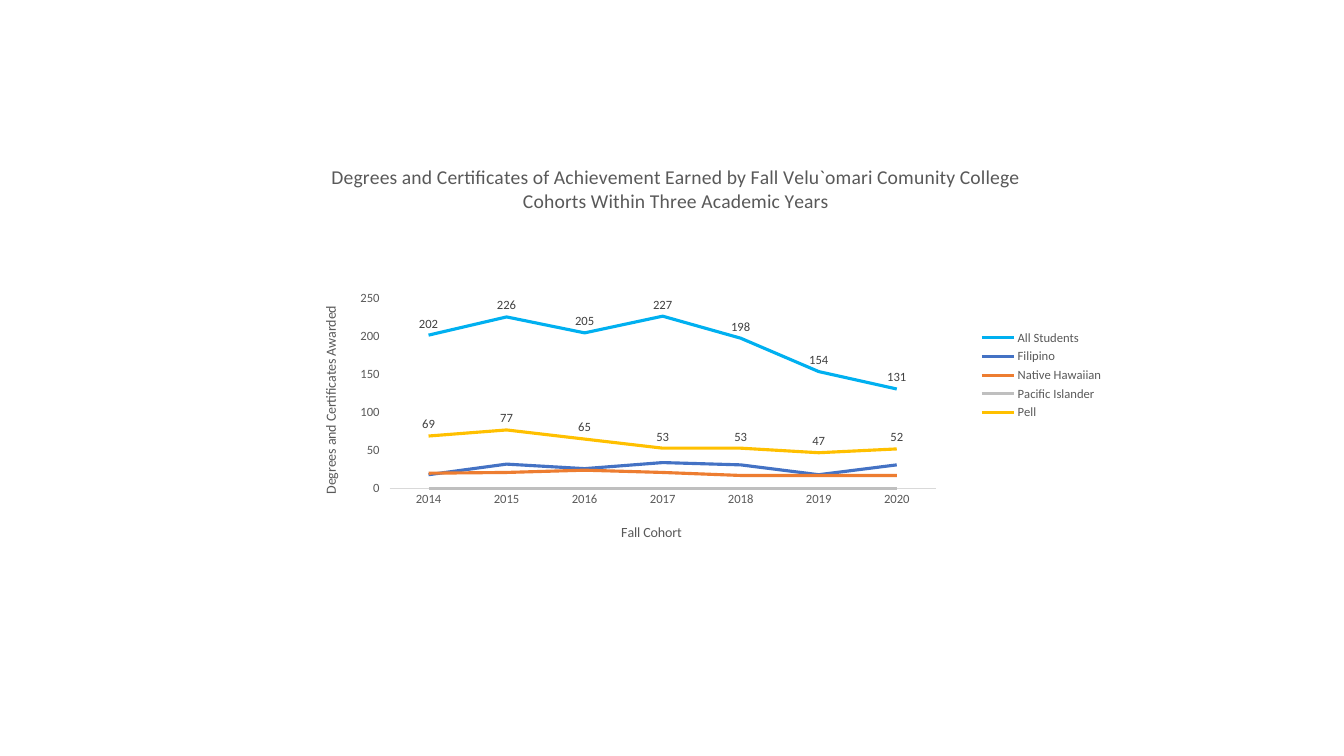
from pptx import Presentation
from pptx.chart.data import CategoryChartData
from pptx.dml.color import RGBColor
from pptx.enum.chart import XL_CHART_TYPE, XL_LABEL_POSITION, XL_LEGEND_POSITION, XL_MARKER_STYLE, XL_TICK_MARK
from pptx.oxml import parse_xml
from pptx.oxml.ns import nsdecls
from pptx.util import Inches, Pt

GREY = "595959"
TITLE = ("Degrees and Certificates of Achievement Earned by Fall Velu`omari "
         "Comunity College Cohorts Within Three Academic Years")
YEARS = [str(year) for year in range(2014, 2021)]
COHORTS = [
    ("All Students", [202, 226, 205, 227, 198, 154, 131], "00B0F0", True),
    ("Filipino", [18, 32, 26, 34, 31, 18, 31], "4472C4", False),
    ("Native Hawaiian", [20, 21, 24, 21, 17, 17, 17], "ED7D31", False),
    ("Pacific Islander", [0, 0, 0, 0, 0, 0, 0], "BFBFBF", False),
    ("Pell", [69, 77, 65, 53, 53, 47, 52], "FFC000", True),
]


def color(value):
    """Return the colour for a hex string."""
    return RGBColor.from_string(value)


def style_font(font, size, value=GREY):
    """Set a plain Calibri font with a size and colour."""
    font.name = "Calibri"
    font.size = Pt(size)
    font.bold = False
    font.color.rgb = color(value)


def write_title(holder, text, size):
    """Fill a chart or axis title with one run."""
    para = holder.text_frame.paragraphs[0]
    span = para.add_run()
    span.text = text
    style_font(span.font, size)


def place(element, left, top, width=None, height=None, inner=False):
    """Give a chart part a manual layout in fractions of the chart."""
    for old in element.xpath("c:layout"):
        element.remove(old)
    target = '<c:layoutTarget val="inner"/>' if inner else ""
    modes = '<c:xMode val="edge"/><c:yMode val="edge"/>'
    sizes = [("x", left), ("y", top), ("w", width), ("h", height)]
    values = "".join(f'<c:{name} val="{value}"/>' for name, value in sizes if value is not None)
    layout = parse_xml(f'<c:layout {nsdecls("c")}><c:manualLayout>{target}{modes}{values}'
                       '</c:manualLayout></c:layout>')
    overlay = element.xpath("c:overlay")
    if overlay:
        overlay[0].addprevious(layout)
    else:
        element.insert(0, layout)


def add_line_chart(page):
    """Add the chart with one line for each cohort."""
    data = CategoryChartData()
    data.categories = YEARS
    for name, values, _, _ in COHORTS:
        data.add_series(name, values)
    chart = page.shapes.add_chart(XL_CHART_TYPE.LINE, Inches(2.29), Inches(1.45),
                                  Inches(8.74), Inches(4.59), data).chart
    style_font(chart.font, 10, "000000")
    chart.plots[0].vary_by_categories = False
    for series, (_, _, hue, labelled) in zip(chart.plots[0].series, COHORTS):
        style_series(series, hue, labelled)
    return chart


def style_series(series, hue, labelled):
    """Colour one line and show its values where wanted."""
    series.smooth = False
    series.marker.style = XL_MARKER_STYLE.NONE
    series.format.line.color.rgb = color(hue)
    series.format.line.width = Pt(2.25)
    if labelled:
        labels = series.data_labels
        labels.show_value = True
        labels.position = XL_LABEL_POSITION.ABOVE
        style_font(labels.font, 9, "404040")


def style_axes(chart):
    """Set the titles, ticks, scale and lines of both axes."""
    cohorts, awards = chart.category_axis, chart.value_axis
    titles = [(cohorts, "Fall Cohort"), (awards, "Degrees and Certificates Awarded")]
    for axis, text in titles:
        axis.has_major_gridlines = False
        style_font(axis.tick_labels.font, 9)
        write_title(axis.axis_title, text, 10)
    cohorts.major_tick_mark = XL_TICK_MARK.NONE
    cohorts.format.line.color.rgb = color("D9D9D9")
    cohorts.format.line.width = Pt(0.75)
    awards.major_tick_mark = XL_TICK_MARK.OUTSIDE
    awards.format.line.fill.background()
    awards.minimum_scale, awards.maximum_scale, awards.major_unit = 0, 250, 50
    body = chart.element.xpath(".//c:valAx/c:title//a:bodyPr")[0]
    body.set("rot", "-5400000")
    body.set("vert", "horz")


def add_legend(chart):
    """Show the legend on the right."""
    chart.has_legend = True
    chart.legend.position = XL_LEGEND_POSITION.RIGHT
    chart.legend.include_in_layout = False
    style_font(chart.legend.font, 9)


def arrange(chart):
    """Place the titles, the plot and the legend."""
    places = {
        "c:chart/c:title": (0.11, 0.03),
        ".//c:catAx/c:title": (0.44, 0.81),
        ".//c:valAx/c:title": (0.1, 0.34),
        ".//c:legend": (0.85, 0.39, 0.14, 0.21),
        ".//c:plotArea": (0.18, 0.33, 0.62, 0.41, True),
    }
    for route, layout in places.items():
        place(chart.element.xpath(route)[0], *layout)


def main():
    """Build and save the slide."""
    deck = Presentation()
    deck.slide_width, deck.slide_height = Inches(13.33), Inches(7.5)
    page = deck.slides.add_slide(deck.slide_layouts[6])
    chart = add_line_chart(page)
    chart.has_title = True
    write_title(chart.chart_title, TITLE, 14)
    style_axes(chart)
    add_legend(chart)
    arrange(chart)
    deck.save("out.pptx")


if __name__ == "__main__":
    main()
